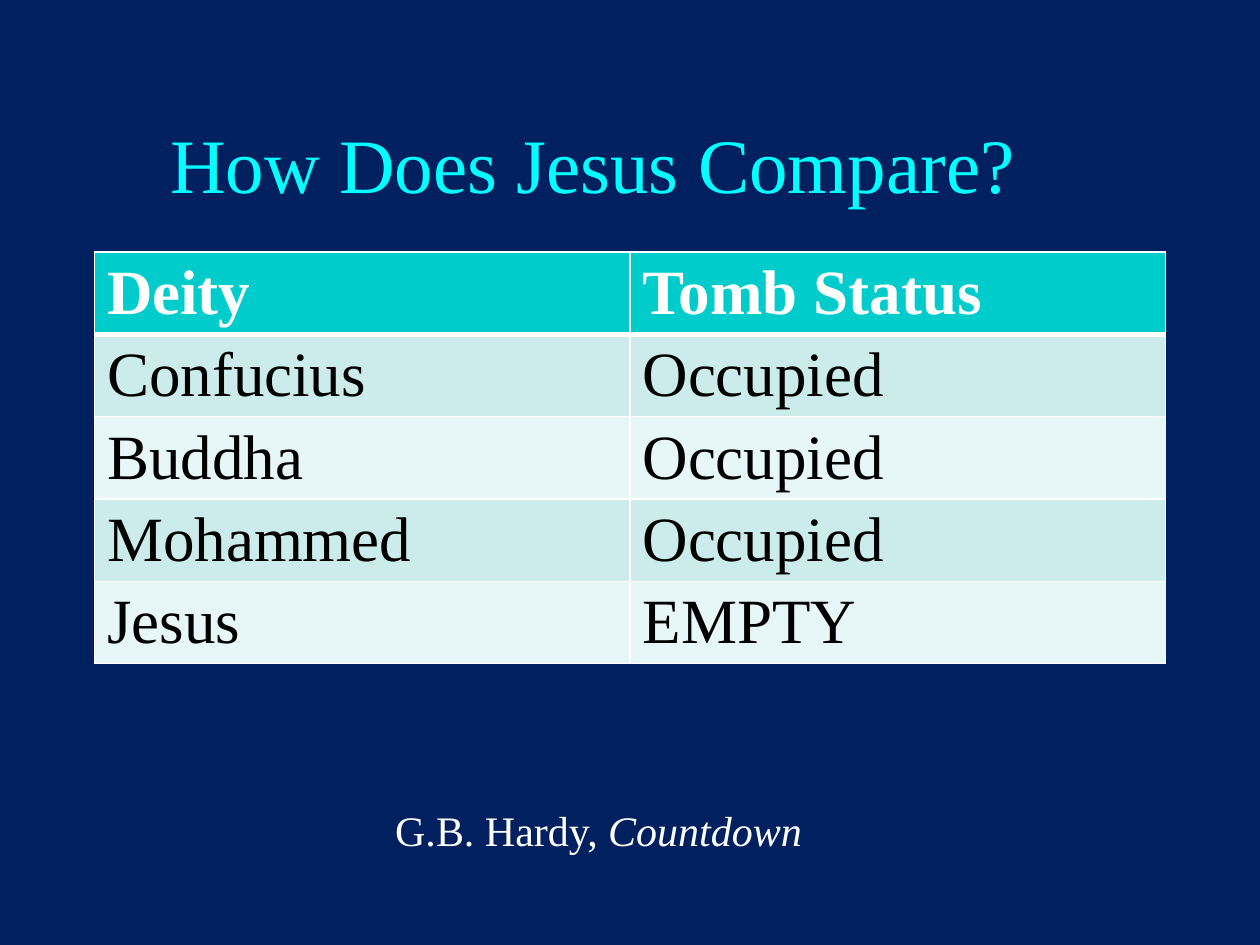
from lxml import etree
from pptx import Presentation
from pptx.dml.color import RGBColor
from pptx.enum.text import MSO_ANCHOR, MSO_AUTO_SIZE, PP_ALIGN
from pptx.oxml.ns import qn
from pptx.util import Pt

LEFT, CENTER = PP_ALIGN.LEFT, PP_ALIGN.CENTER
MIDDLE = MSO_ANCHOR.MIDDLE
NO_FIT, GROW = MSO_AUTO_SIZE.NONE, MSO_AUTO_SIZE.SHAPE_TO_FIT_TEXT

FONT = "Times New Roman"
COLORS = {
    "back": "002060",
    "title": "00FFFF",
    "head": "00CCCC",
    "odd": "CCECEC",
    "even": "E7F6F6",
    "white": "FFFFFF",
    "black": "000000",
}
ROWS = [
    ("Deity", "Tomb Status"),
    ("Confucius", "Occupied"),
    ("Buddha", "Occupied"),
    ("Mohammed", "Occupied"),
    ("Jesus", "EMPTY"),
]


def rgb(name):
    return RGBColor.from_string(COLORS[name])


def style(run, size, color, bold=False, italic=False):
    font = run.font
    font.name, font.size = FONT, Pt(size)
    font.bold, font.italic = bold, italic
    font.color.rgb = rgb(color)


def add_title(slide, text):
    title = slide.shapes.title
    title.left, title.top = Pt(90), Pt(48)
    title.width, title.height = Pt(612), Pt(90)
    frame = title.text_frame
    frame.text = text
    frame.auto_size, frame.vertical_anchor = NO_FIT, MIDDLE
    para = frame.paragraphs[0]
    para.alignment = LEFT
    style(para.runs[0], 44, "title")


def add_edge(cell, side, width):
    props = cell._tc.get_or_add_tcPr()
    line = etree.SubElement(props, qn("a:" + side), w=str(Pt(width)))
    fill = etree.SubElement(line, qn("a:solidFill"))
    etree.SubElement(fill, qn("a:srgbClr"), val=COLORS["white"])


def fill_cell(cell, text, row):
    head = row == 0
    # Borders come before the fill in the cell properties
    for side in ("lnL", "lnR", "lnT", "lnB"):
        thick = (head and side == "lnB") or (row == 1 and side == "lnT")
        add_edge(cell, side, 3 if thick else 1)
    cell.fill.solid()
    band = "odd" if row % 2 else "even"
    cell.fill.fore_color.rgb = rgb("head" if head else band)
    cell.text = text
    run = cell.text_frame.paragraphs[0].runs[0]
    style(run, 36, "white" if head else "black", bold=head)


def add_grid(slide, rows):
    high = 47
    frame = slide.shapes.add_table(len(rows), len(rows[0]), Pt(54), Pt(144),
                                   Pt(612), Pt(high * len(rows)))
    for r, texts in enumerate(rows):
        frame.table.rows[r].height = Pt(high)
        for c, text in enumerate(texts):
            fill_cell(frame.table.cell(r, c), text, r)


def add_credit(slide, author, book):
    box = slide.shapes.add_textbox(Pt(96), Pt(456), Pt(492), Pt(36))
    frame = box.text_frame
    frame.word_wrap, frame.auto_size = True, GROW
    para = frame.paragraphs[0]
    para.alignment = CENTER
    for text, italic in ((author, False), (book, True)):
        run = para.add_run()
        run.text = text
        style(run, 24, "white", italic=italic)


def main():
    deck = Presentation()
    deck.slide_width, deck.slide_height = Pt(720), Pt(540)
    # Title Only layout
    slide = deck.slides.add_slide(deck.slide_layouts[5])
    back = slide.background.fill
    back.solid()
    back.fore_color.rgb = rgb("back")

    add_title(slide, "How Does Jesus Compare?")
    add_grid(slide, ROWS)
    add_credit(slide, "G.B. Hardy, ", "Countdown")
    deck.save("out.pptx")


if __name__ == "__main__":
    main()
